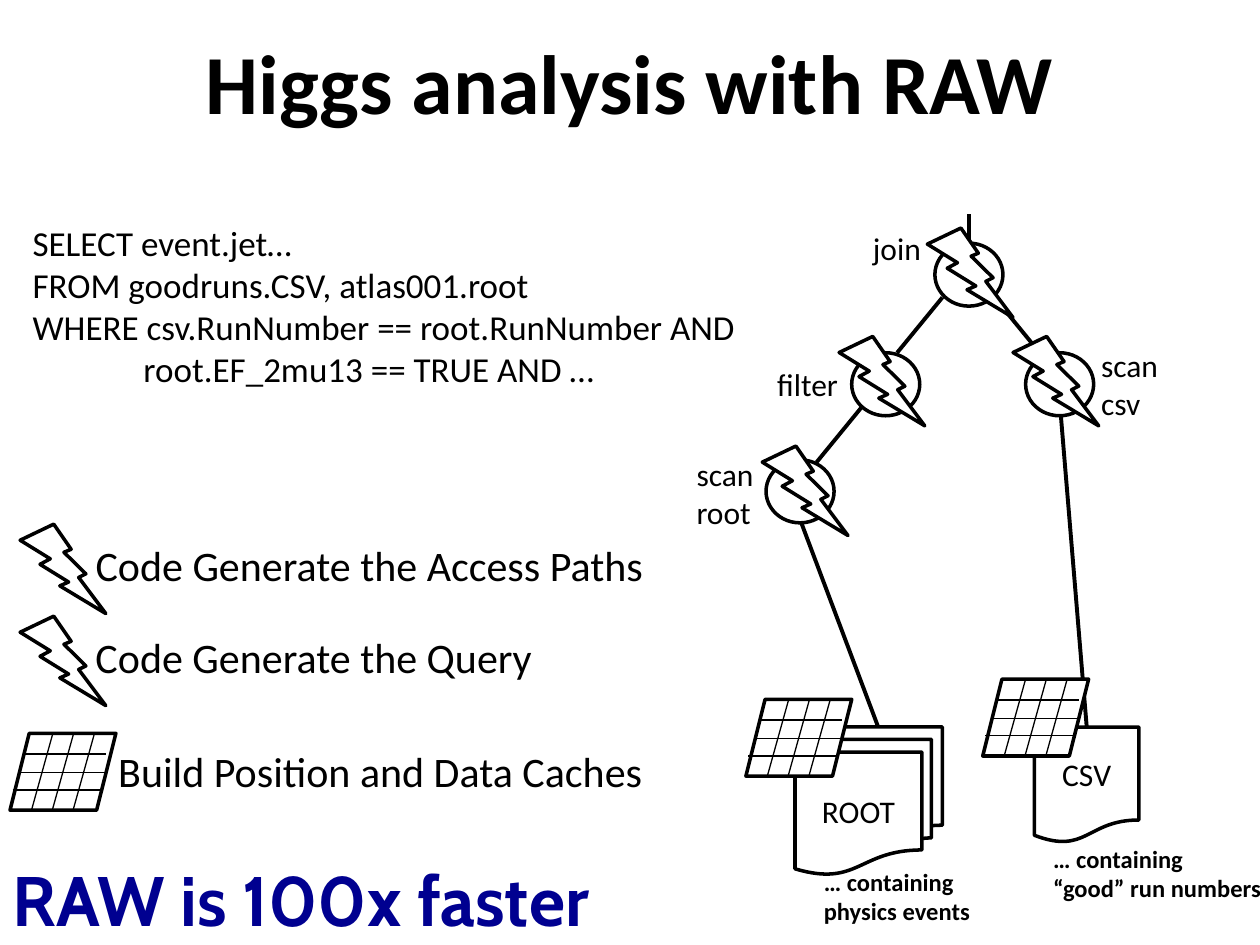
from pptx import Presentation
from pptx.dml.color import RGBColor
from pptx.enum.shapes import MSO_CONNECTOR, MSO_SHAPE
from pptx.enum.text import MSO_ANCHOR, PP_ALIGN
from pptx.oxml.ns import qn
from pptx.util import Inches, Pt
from lxml.etree import SubElement

BLACK = RGBColor(0x00, 0x00, 0x00)
WHITE = RGBColor(0xFF, 0xFF, 0xFF)
NAVY = RGBColor(0x00, 0x00, 0x90)

# The page is a grid of 100 columns by 75 rows, with square cells.
CELL = Inches(0.1)
COLUMNS, ROWS = 100, 75

deck = Presentation()
deck.slide_width, deck.slide_height = COLUMNS * CELL, ROWS * CELL
page = deck.slides.add_slide(deck.slide_layouts[6])


def write(box, lines, size, align=PP_ALIGN.LEFT, anchor=MSO_ANCHOR.TOP,
          wrap=False, name="Calibri", bold=False, color=BLACK):
    """Fill the box with one paragraph per line, all in one format."""
    frame = box.text_frame
    frame.word_wrap, frame.vertical_anchor = wrap, anchor
    frame.text = "\n".join(lines)
    font_format = {"size": Pt(size), "name": name, "bold": bold}
    for para in frame.paragraphs:
        para.alignment = align
        for span in para.runs:
            for key, value in font_format.items():
                setattr(span.font, key, value)
            span.font.color.rgb = color
    return frame


def draw(shapes, kind, cells, width=2):
    """Draw an outlined white shape (left, top, width, height) or a
    straight line (from x, from y, to x, to y), measured in cells."""
    lengths = [round(cell * CELL) for cell in cells]
    if kind == MSO_CONNECTOR.STRAIGHT:
        item = shapes.add_connector(kind, *lengths)
        SubElement(item._element.spPr, qn("a:effectLst"))
    else:
        item = shapes.add_shape(kind, *lengths)
        item.shadow.inherit = False
        item.fill.solid()
        item.fill.fore_color.rgb = WHITE
    item.line.color.rgb = BLACK
    item.line.width = Pt(width)
    return item


# Data files
files = {}
for label, kind, cells in [
    ("CSV", MSO_SHAPE.FLOWCHART_DOCUMENT, (82.1, 57.7, 8.3, 9.2)),
    ("ROOT", MSO_SHAPE.FLOWCHART_MULTIDOCUMENT, (63.1, 57.7, 11.7, 11.7)),
]:
    files[label] = draw(page.shapes, kind, cells)
    write(files[label], [label], 18, PP_ALIGN.CENTER, MSO_ANCHOR.MIDDLE, True)

# Operators of the query plan: circle corner, then bolt corner
operators = [
    ((74.2, 19.3), (73.6, 18.1)),
    ((67.6, 28), (66.6, 26.7)),
    ((81.4, 28), (80.4, 26.7)),
    ((60.8, 36.5), (60.5, 35.4)),
]
for circle, bolt in operators:
    draw(page.shapes, MSO_SHAPE.OVAL, (*circle, 5.4, 5))

# Edges of the query plan
for ends in [
    (64.8, 36.7, 68.4, 32.3),
    (71.2, 28, 74.8, 23.6),
    (82.6, 28.1, 79, 23.7),
    (63.6, 41.5, 69.7, 57.7),
    (76.9, 19.2, 76.9, 17),
]:
    draw(page.shapes, MSO_CONNECTOR.STRAIGHT, ends, 2.25)
csv_edge = draw(page.shapes, MSO_CONNECTOR.STRAIGHT, (84.2, 33, 86.3, 57.7), 2.25)
csv_edge.end_connect(files["CSV"], 0)

# Lightning bolts on the operators and in the legend
legend_bolts = [(1.6, 41.6), (1.6, 48.9)]
for corner in [bolt for circle, bolt in operators] + legend_bolts:
    draw(page.shapes, MSO_SHAPE.LIGHTNING_BOLT, (*corner, 6.8, 7.1))

# Caches: slanted tables with three inner lines each way
for left, top in [(0.8, 58.2), (59.2, 55.5), (78, 53.9)]:
    cache = page.shapes.add_group_shape().shapes
    draw(cache, MSO_SHAPE.PARALLELOGRAM, (left, top, 8.4, 6.1))
    for x in (1.7, 3.35, 5):
        draw(cache, MSO_CONNECTOR.STRAIGHT,
             (left + x, top + 6.1, left + x + 1.7, top), 0.75)
    for start, end, y in [(1.1, 7.6, 1.65), (0.8, 7.6, 3.1), (0.2, 7.3, 4.5)]:
        draw(cache, MSO_CONNECTOR.STRAIGHT,
             (left + start, top + y, left + end, top + y), 0.75)

# Texts
centred = {"align": PP_ALIGN.CENTER, "anchor": MSO_ANCHOR.MIDDLE,
           "wrap": True, "bold": True}
query = ["SELECT event.jet…", "FROM goodruns.CSV, atlas001.root",
         "WHERE csv.RunNumber == root.RunNumber AND",
         "root.EF_2mu13 == TRUE AND …"]
for cells, lines, size, options in [
    ((5, 0.2, 90, 12.5), ["Higgs analysis with RAW"], 48, centred),
    ((1.6, 17.1, 58.5, 14.5), query, 20, {}),
    ((68.3, 17.7, 5.9, 4), ["join"], 18, {}),
    ((54.3, 35.6, 6.6, 7.1), ["scan", "root"], 18, {}),
    ((86.4, 27, 6.6, 7.1), ["scan", "csv"], 18, {}),
    ((60.7, 28.5, 6.9, 4), ["filter"], 18, {}),
    ((82.6, 66.5, 19.1, 5.7), ["… containing", "“good” run numbers"], 14,
     {"bold": True}),
    ((64.4, 68.3, 13.7, 5.7), ["… containing", "physics events"], 14,
     {"bold": True}),
    ((6.6, 42.3, 45.9, 5), ["Code Generate the Access Paths"], 24, {}),
    ((6.6, 49.6, 37, 5), ["Code Generate the Query"], 24, {}),
    ((8.4, 58.7, 44, 5), ["Build Position and Data Caches"], 24, {}),
    ((0, 67.5, COLUMNS, 7.7), ["RAW is 100x faster"], 40,
     {"wrap": True, "name": "Cabin", "bold": True, "color": NAVY}),
]:
    box = page.shapes.add_textbox(*[round(cell * CELL) for cell in cells])
    frame = write(box, lines, size, **options)
    if lines is query:
        continuation = frame.paragraphs[-1]._p.get_or_add_pPr()
        continuation.set("marL", str(round(8.8 * CELL)))

deck.save("out.pptx")
